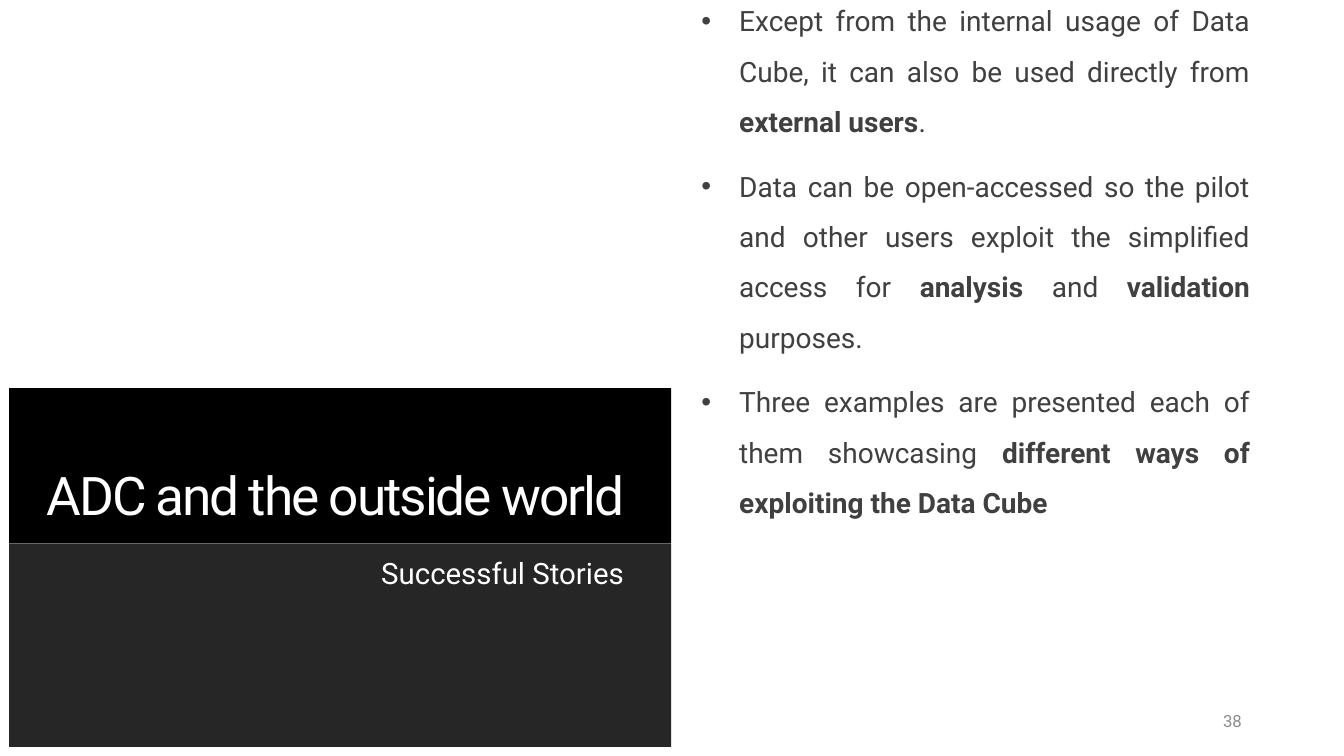
from dataclasses import dataclass

from lxml.etree import SubElement
from pptx import Presentation
from pptx.dml.color import RGBColor
from pptx.enum.shapes import MSO_SHAPE
from pptx.enum.text import MSO_ANCHOR, PP_ALIGN
from pptx.oxml.ns import qn
from pptx.util import Pt

FONT = "Roboto"
BULLET_INDENT = 27


@dataclass
class Box:
    left: float
    top: float
    width: float
    height: float
    fill: str = ""
    anchor: MSO_ANCHOR = MSO_ANCHOR.TOP
    insets: tuple[float, float, float, float] = (7.2, 3.6, 7.2, 3.6)


TITLE = Box(6.5, 277.2, 473, 110.9, "000000", MSO_ANCHOR.BOTTOM, (22.5, 3.6, 33.8, 11.5))
SUBTITLE = Box(6.5, 388.1, 473, 145.4, "262626", insets=(22.5, 11.5, 33.8, 3.6))
BODY = Box(493.9, 64.8, 406.1, 309.6, anchor=MSO_ANCHOR.BOTTOM)
PAGE_NUMBER = Box(678.2, 500.4, 216, 28.8, anchor=MSO_ANCHOR.MIDDLE)

# Text between ** marks is bold.
BODY_POINTS = [
    "Except from the internal usage of Data Cube, it can also be used directly from "
    "**external users**.",
    "Data can be open-accessed so the pilot and other users exploit the simplified "
    "access for **analysis **and **validation **purposes.",
    "Three examples are presented each of them showcasing "
    "**different ways of exploiting the Data Cube**",
]


def rgb(color: str) -> RGBColor:
    return RGBColor.from_string(color)


def add_box(shapes, box: Box):
    """Add a filled rectangle, or a plain text box if there is no fill."""
    place = [Pt(v) for v in (box.left, box.top, box.width, box.height)]
    if box.fill:
        s = shapes.add_shape(MSO_SHAPE.RECTANGLE, *place)
        s.shadow.inherit = False
        s.fill.solid()
        s.fill.fore_color.rgb = rgb(box.fill)
        s.line.fill.background()
    else:
        s = shapes.add_textbox(*place)
    tf = s.text_frame
    tf.word_wrap = True
    tf.vertical_anchor = box.anchor
    tf.margin_left, tf.margin_top, tf.margin_right, tf.margin_bottom = map(Pt, box.insets)
    return tf


def add_bullet(p) -> None:
    pPr = p._p.get_or_add_pPr()
    pPr.set("marL", str(Pt(BULLET_INDENT)))
    pPr.set("indent", str(-Pt(BULLET_INDENT)))
    SubElement(pPr, qn("a:buFont")).set("typeface", "Arial")
    SubElement(pPr, qn("a:buChar")).set("char", "•")


def write(tf, *texts: str, size: float, color: str, align: PP_ALIGN = PP_ALIGN.RIGHT,
          line_spacing: float = 1.0, gap: float = 0, bullet: bool = False,
          tracking: float = 0) -> None:
    for i, text in enumerate(texts):
        p = tf.add_paragraph() if i else tf.paragraphs[0]
        if bullet:
            add_bullet(p)
        p.alignment = align
        p.line_spacing = line_spacing
        p.space_before = Pt(gap if i else 0)
        for j, part in enumerate(text.split("**")):
            if not part:
                continue
            r = p.add_run()
            r.text = part
            r.font.name = FONT
            r.font.size = Pt(size)
            r.font.bold = j % 2 == 1
            r.font.color.rgb = rgb(color)
            if tracking:
                r._r.get_or_add_rPr().set("spc", str(round(tracking * 100)))


def main() -> None:
    prs = Presentation()
    prs.slide_width, prs.slide_height = Pt(960), Pt(540)
    shapes = prs.slides.add_slide(prs.slide_layouts[6]).shapes

    write(add_box(shapes, TITLE), "ADC and the outside world",
          size=38, color="FFFFFF", line_spacing=0.9, tracking=-1.5)
    write(add_box(shapes, SUBTITLE), "Successful Stories",
          size=21, color="FFFFFF", line_spacing=0.9)
    write(add_box(shapes, PAGE_NUMBER), "38", size=12, color="8C8C8C")
    write(add_box(shapes, BODY), *BODY_POINTS, size=20, color="404040",
          align=PP_ALIGN.JUSTIFY, line_spacing=1.5, gap=10, bullet=True)

    prs.save("out.pptx")


if __name__ == "__main__":
    main()
